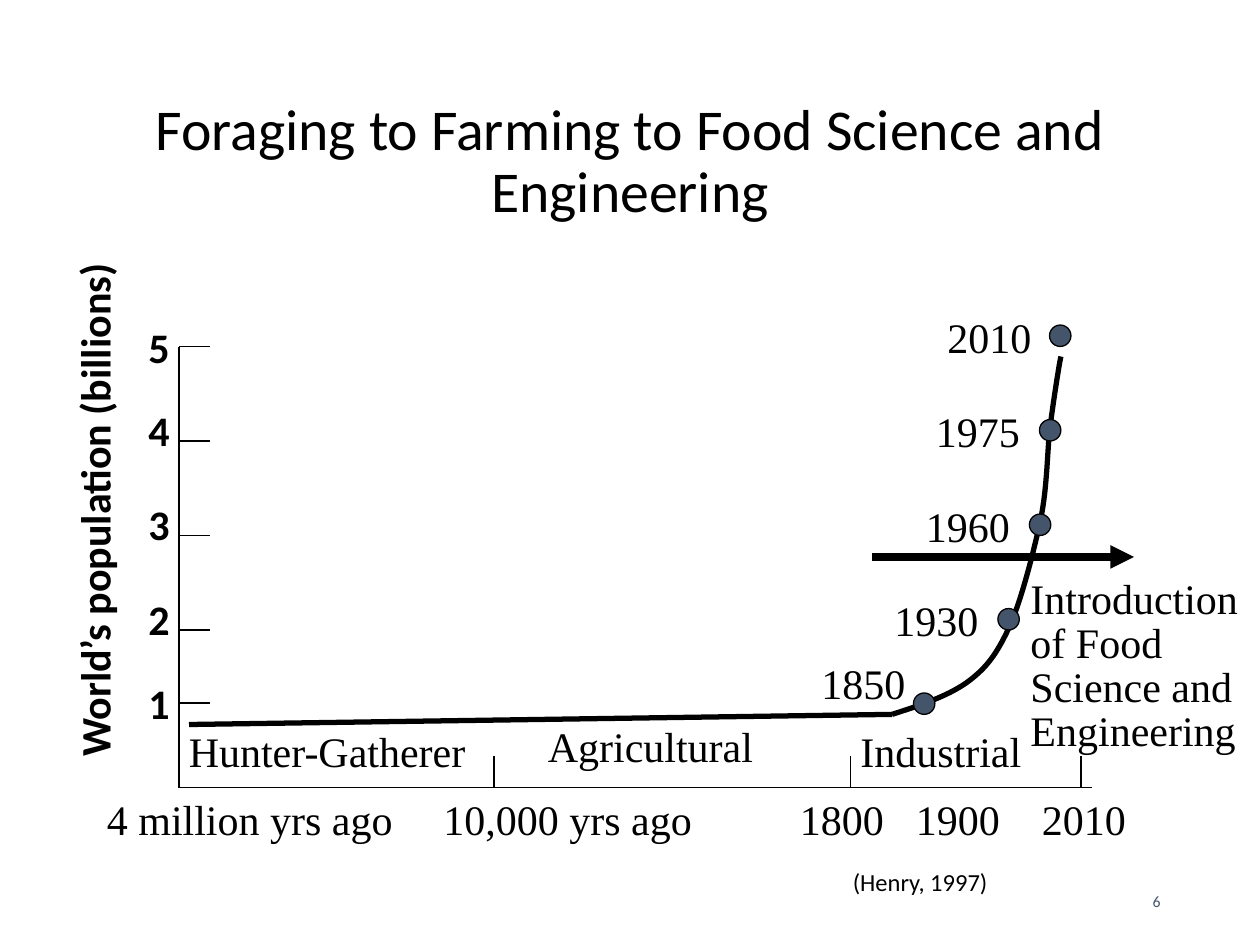
from dataclasses import dataclass

from lxml.etree import SubElement
from pptx import Presentation
from pptx.dml.color import RGBColor
from pptx.enum.shapes import MSO_CONNECTOR as Connector, MSO_SHAPE as Shape
from pptx.enum.text import MSO_ANCHOR as Anchor, MSO_AUTO_SIZE as AutoSize, PP_ALIGN as Align
from pptx.oxml.ns import qn
from pptx.util import Inches, Pt


@dataclass(frozen=True)
class Theme:
    ink: RGBColor = RGBColor(0x00, 0x00, 0x00)
    accent: RGBColor = RGBColor(0x44, 0x54, 0x6A)
    sans: str = "Calibri"
    serif: str = "Times New Roman"
    title: float = 33
    label: float = 24
    source: float = 14
    number: float = 9
    thin: float = 0.75
    curve: float = 3
    arrow: float = 4.5


def bezier(start, segments, steps=12):
    points = [start]
    for first, second, end in segments:
        origin = points[-1]
        for step in range(1, steps + 1):
            t = step / steps
            u = 1 - t
            points.append(tuple(
                u**3 * a + 3 * u * u * t * b + 3 * u * t * t * c + t**3 * d
                for a, b, c, d in zip(origin, first, second, end)))
    return points


class SlideBuilder:
    def __init__(self, page, theme):
        self.page = page
        self.theme = theme

    def style(self, para, size, font, color=None, bold=False):
        para.font.size = Pt(size)
        para.font.name = font
        para.font.bold = bold
        para.font.color.rgb = color or self.theme.ink

    def stroke(self, line, width):
        line.color.rgb = self.theme.ink
        line.width = Pt(width)

    def title(self, text, left, top, width, height):
        box = self.page.shapes.title
        box.left, box.top, box.width, box.height = map(Inches, (left, top, width, height))
        frame = box.text_frame
        frame.text = text
        frame.word_wrap = True
        frame.auto_size = AutoSize.NONE
        frame.vertical_anchor = Anchor.MIDDLE
        para = frame.paragraphs[0]
        para.alignment = Align.CENTER
        para.line_spacing = 0.9
        self.style(para, self.theme.title, self.theme.sans)

    def label(self, text, left, top, width, height=0.5, size=None, font=None, color=None,
              bold=False, wrap=False, align=Align.LEFT, anchor=Anchor.TOP,
              rotation=0, spacing=None):
        box = self.page.shapes.add_textbox(*map(Inches, (left, top, width, height)))
        box.rotation = rotation
        frame = box.text_frame
        frame.text = text
        frame.word_wrap = wrap
        frame.vertical_anchor = anchor
        frame.auto_size = AutoSize.NONE if anchor == Anchor.MIDDLE else AutoSize.SHAPE_TO_FIT_TEXT
        para = frame.paragraphs[0]
        para.alignment = align
        if spacing:
            para.line_spacing = spacing
        self.style(para, size or self.theme.label, font or self.theme.serif, color, bold)

    def line(self, start, end, width=None, arrow=False):
        connector = self.page.shapes.add_connector(
            Connector.STRAIGHT, *map(Inches, (*start, *end)))
        self.stroke(connector.line, width or self.theme.thin)
        if arrow:
            SubElement(connector.line._get_or_add_ln(), qn("a:tailEnd"), type="triangle")
        SubElement(connector._element.spPr, qn("a:effectLst"))

    def curve(self, points):
        scaled = [(Inches(x), Inches(y)) for x, y in points]
        builder = self.page.shapes.build_freeform(*scaled[0])
        builder.add_line_segments(scaled[1:], close=False)
        shape = builder.convert_to_shape()
        shape.shadow.inherit = False
        shape.fill.background()
        self.stroke(shape.line, self.theme.curve)

    def dot(self, left, top, size=0.17):
        shape = self.page.shapes.add_shape(
            Shape.OVAL, *map(Inches, (left, top, size, size)))
        shape.shadow.inherit = False
        shape.fill.solid()
        shape.fill.fore_color.rgb = self.theme.accent
        self.stroke(shape.line, self.theme.thin)


def main():
    deck = Presentation()
    deck.slide_width, deck.slide_height = Inches(10), Inches(7.5)
    theme = Theme()
    slide = SlideBuilder(deck.slides.add_slide(deck.slide_layouts[5]), theme)

    slide.title("Foraging to Farming to Food Science and Engineering", 0.75, 0.14, 8.5, 2.3)
    slide.label("6", 7.06, 6.95, 2.25, 0.4, size=theme.number, font=theme.sans,
                color=theme.accent, wrap=True, align=Align.RIGHT, anchor=Anchor.MIDDLE)
    slide.label("World’s population (billions)", -1.6, 3.51, 4.69,
                font=theme.sans, bold=True, rotation=270)
    slide.label("Introduction of Food Science and Engineering", 8.08, 4.55, 1.92, 1.45,
                wrap=True, spacing=0.87)

    axis_x, axis_y, tick = 1.42, 6.25, 0.25
    slide.line((axis_x, 2.75), (axis_x, axis_y))
    slide.line((axis_x, axis_y), (8.67, axis_y))
    for text, left, width in [("4 million yrs ago", 0.75, 2.47), ("10,000 yrs ago", 3.42, 2.17),
                              ("1800", 6.25, 0.87), ("1900", 7.17, 0.87), ("2010", 8.17, 0.88)]:
        slide.label(text, left, axis_y, width)
    for x in (3.92, 6.75, 8.58):
        slide.line((x, axis_y), (x, axis_y - tick))
    for billions, label_top, y in [(1, 5.33, 5.58), (2, 4.66, 5), (3, 3.91, 4.25),
                                   (4, 3.16, 3.5), (5, 2.5, 2.75)]:
        slide.label(str(billions), 1.08, label_top, 0.39, font=theme.sans, bold=True)
        slide.line((axis_x, y), (axis_x + tick, y))

    bend = (7.08, 5.67)
    slide.line((1.5, 5.75), bend, theme.curve)
    slide.curve(bezier(bend, [
        ((7.3, 5.6), (7.51, 5.53), (7.67, 5.42)),
        ((7.82, 5.31), (7.9, 5.21), (8, 5)),
        ((8.1, 4.79), (8.19, 4.43), (8.25, 4.17)),
        ((8.31, 3.9), (8.31, 3.64), (8.33, 3.42)),
        ((8.36, 3.19), (8.4, 2.93), (8.42, 2.83)),
    ]))
    for year, left, top, dot_left, dot_top in [
            ("1850", 6.42, 5.17, 7.25, 5.5), ("1930", 7, 4.67, 7.92, 4.83),
            ("1960", 7.25, 3.92, 8.17, 4.08), ("1975", 7.33, 3.17, 8.25, 3.33),
            ("2010", 7.42, 2.42, 8.33, 2.58)]:
        slide.label(year, left, top, 0.87)
        slide.dot(dot_left, dot_top)

    for era, left, top, width in [("Hunter-Gatherer", 1.4, 5.71, 2.4),
                                  ("Agricultural", 4.25, 5.67, 1.83),
                                  ("Industrial", 6.73, 5.71, 1.48)]:
        slide.label(era, left, top, width)
    slide.line((6.92, 4.42), (9, 4.42), theme.arrow, arrow=True)
    slide.label("(Henry, 1997)", 6.67, 6.83, 3.1, 0.33,
                size=theme.source, font=theme.sans, wrap=True)

    deck.save("out.pptx")


if __name__ == "__main__":
    main()
